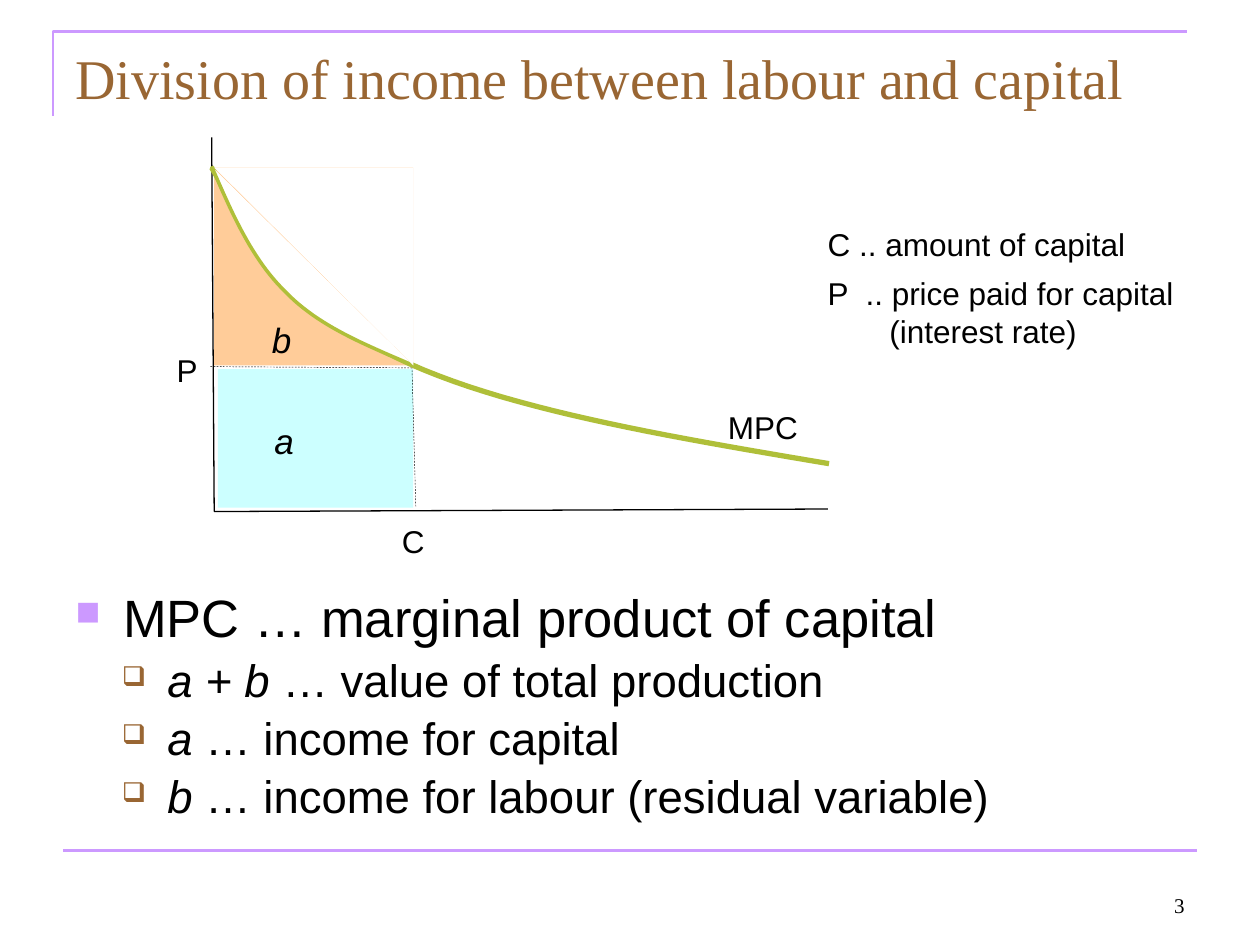
import pptx
import pptx.util
import pptx.dml.color
import pptx.enum.dml
import pptx.enum.shapes
import pptx.enum.text
import pptx.oxml.ns
from lxml import etree

Inches = pptx.util.Inches
ALIGN = pptx.enum.text.PP_ALIGN
ANCHOR = pptx.enum.text.MSO_ANCHOR
SHAPE = pptx.enum.shapes.MSO_SHAPE

THEME = {
    "colors": {
        "text": "000000", "title": "996633", "accent": "CC99FF", "paper": "FFFFFF",
        "capital": "CCFFFF", "labour": "FFCC99", "curve": "AFBF39",
    },
    "sizes": {"title": 32, "body": 30, "sub": 26, "area": 20, "label": 18, "number": 12},
    "fonts": {"serif": "Times New Roman", "sans": "Arial"},
}

TITLE = "Division of income between labour and capital"
PAGE_NUMBER = "3"
BODY = [
    ("body", [("MPC … marginal product of capital", False)]),
    ("sub", [("a + b ", True), ("… value of total production", False)]),
    ("sub", [("a", True), (" … income for capital", False)]),
    ("sub", [("b", True), (" … income for labour (residual variable)", False)]),
]
BULLETS = {
    "body": {"level": 0, "margin": 0.38, "indent": -0.38, "char": "■", "color": "accent", "pct": 65},
    "sub": {"level": 1, "margin": 0.73, "indent": -0.36, "char": "❑", "color": "title", "pct": 60},
}
LEGEND = [
    ("C .. amount of capital", 0),
    ("P  .. price paid for capital (interest rate)", 0.49),
]
LABELS = [
    ("P", (1.16, 2.74, 0.65, 0.4), "label"),
    ("C", (2.86, 4.09, 0.84, 0.4), "label"),
    ("MPC", (5.52, 3.19, 1.07, 0.4), "label"),
    ("a", (1.89, 3.28, 0.73, 0.43), "area"),
    ("b", (1.87, 2.48, 0.73, 0.43), "area"),
]
LINES = [
    ((0.5, 6.75), (9.5, 6.75), "accent", 1.5, False),
    ((1.67, 2.91), (3.29, 2.92), "text", 0.25, True),
    ((3.3, 4.02), (3.27, 2.92), "text", 0.25, True),
    ((1.68, 1.09), (1.7, 4.06), "text", 0.75, False),
    ((1.7, 4.06), (6.57, 4.04), "text", 0.75, False),
]
FRAME = [(0.42, 0.92), (0.42, 0.25), (9.42, 0.25)]
MPC_CURVE = [(1.68, 1.33), (2.01, 1.89), (2.33, 2.45), (3.15, 2.84),
             (3.97, 3.24), (5.27, 3.46), (6.58, 3.68)]
LABOUR_CURVE = [(1.68, 1.32), (1.84, 1.69), (2, 2.06), (2.27, 2.32),
                (2.53, 2.59), (2.91, 2.74), (3.28, 2.9)]
CAPITAL_BOX = (1.73, 2.93, 1.55, 1.1)
LABOUR_BOX = (1.7, 1.33, 1.58, 1.57)
STEPS = 24


def apply(obj, values):
    for name, value in values.items():
        setattr(obj, name, value)


def rgb(name):
    return pptx.dml.color.RGBColor.from_string(THEME["colors"][name])


def set_line(s, color, width):
    s.line.color.rgb = rgb(color)
    s.line.width = pptx.util.Pt(width)


def add_area(slide, kind, box, color, rotation=0):
    s = slide.shapes.add_shape(kind, *map(Inches, box))
    s.shadow.inherit = False
    s.fill.solid()
    s.fill.fore_color.rgb = rgb(color)
    s.line.fill.background()
    s.rotation = rotation


def add_path(slide, points, color, width, fill=None):
    points = [tuple(map(Inches, point)) for point in points]
    builder = slide.shapes.build_freeform(*points[0], scale=1.0)
    builder.add_line_segments(points[1:], close=False)
    s = builder.convert_to_shape()
    s.shadow.inherit = False
    if fill:
        s.fill.solid()
        s.fill.fore_color.rgb = rgb(fill)
    else:
        s.fill.background()
    set_line(s, color, width)


def bezier(points):
    result = [points[0]]
    for i in range(0, len(points) - 1, 3):
        controls = points[i:i + 4]
        for step in range(1, STEPS + 1):
            t = step / STEPS
            weights = ((1 - t) ** 3, 3 * t * (1 - t) ** 2, 3 * t * t * (1 - t), t ** 3)
            result.append(tuple(sum(w * c[axis] for w, c in zip(weights, controls))
                                for axis in (0, 1)))
    return result


def add_line(slide, start, end, color, width, dashed):
    s = slide.shapes.add_connector(pptx.enum.shapes.MSO_CONNECTOR.STRAIGHT,
                                   *map(Inches, start + end))
    set_line(s, color, width)
    if dashed:
        s.line.dash_style = pptx.enum.dml.MSO_LINE.DASH
    etree.SubElement(s._element.spPr, pptx.oxml.ns.qn("a:effectLst"))


def add_frame(slide, box, anchor=ANCHOR.TOP):
    tf = slide.shapes.add_textbox(*map(Inches, box)).text_frame
    apply(tf, {"word_wrap": True, "vertical_anchor": anchor})
    return tf


def next_paragraph(tf, index):
    return tf.paragraphs[0] if index == 0 else tf.add_paragraph()


def add_run(p, text, size, color="text", font="sans", italic=False):
    r = p.add_run()
    r.text = text
    apply(r.font, {"name": THEME["fonts"][font], "italic": italic,
                   "size": pptx.util.Pt(THEME["sizes"][size])})
    r.font.color.rgb = rgb(color)


def set_indent(p, margin, indent):
    pPr = p._p.get_or_add_pPr()
    pPr.set("marL", str(Inches(margin)))
    pPr.set("indent", str(Inches(indent)))
    return pPr


def set_bullet(p, bullet):
    qn = pptx.oxml.ns.qn
    pPr = set_indent(p, bullet["margin"], bullet["indent"])
    color = etree.SubElement(pPr, qn("a:buClr"))
    etree.SubElement(color, qn("a:srgbClr"), val=THEME["colors"][bullet["color"]])
    etree.SubElement(pPr, qn("a:buSzPct"), val=str(bullet["pct"] * 1000))
    etree.SubElement(pPr, qn("a:buChar"), char=bullet["char"])


def add_text(slide, text, box, size, align=ALIGN.LEFT, anchor=ANCHOR.TOP, **style):
    p = add_frame(slide, box, anchor).paragraphs[0]
    p.alignment = align
    add_run(p, text, size, **style)


def add_body(slide):
    tf = add_frame(slide, (0.5, 4.65, 9, 2.06))
    for i, (kind, runs) in enumerate(BODY):
        p = next_paragraph(tf, i)
        bullet = BULLETS[kind]
        space = pptx.util.Pt(THEME["sizes"][kind] * 0.2)
        apply(p, {"level": bullet["level"], "line_spacing": 0.9, "space_before": space})
        set_bullet(p, bullet)
        for text, italic in runs:
            add_run(p, text, kind, italic=italic)


def add_legend(slide):
    tf = add_frame(slide, (6.47, 1.74, 3.12, 1.09))
    for i, (text, hang) in enumerate(LEGEND):
        p = next_paragraph(tf, i)
        p.space_before = pptx.util.Pt(6)
        set_indent(p, hang, -hang)
        add_run(p, text, "label")


def main():
    prs = pptx.Presentation()
    apply(prs, {"slide_width": Inches(10), "slide_height": Inches(7.5)})
    slide = prs.slides.add_slide(prs.slide_layouts[6])
    add_path(slide, FRAME, "accent", 1.5)
    add_area(slide, SHAPE.RECTANGLE, CAPITAL_BOX, "capital")
    add_area(slide, SHAPE.RECTANGLE, LABOUR_BOX, "labour")
    for line in LINES:
        add_line(slide, *line)
    add_path(slide, bezier(MPC_CURVE), "curve", 3)
    add_path(slide, bezier(LABOUR_CURVE), "curve", 2, "paper")
    add_area(slide, SHAPE.RIGHT_TRIANGLE, LABOUR_BOX, "paper", 180)
    add_text(slide, TITLE, (0.5, 0.3, 9, 0.9), "title", color="title", font="serif")
    for text, box, size in LABELS:
        add_text(slide, text, box, size, ALIGN.CENTER, italic=size == "area")
    add_legend(slide)
    add_body(slide)
    add_text(slide, PAGE_NUMBER, (7.17, 6.83, 2.33, 0.5), "number",
             ALIGN.RIGHT, ANCHOR.BOTTOM, font="serif")
    prs.save("out.pptx")


if __name__ == "__main__":
    main()
